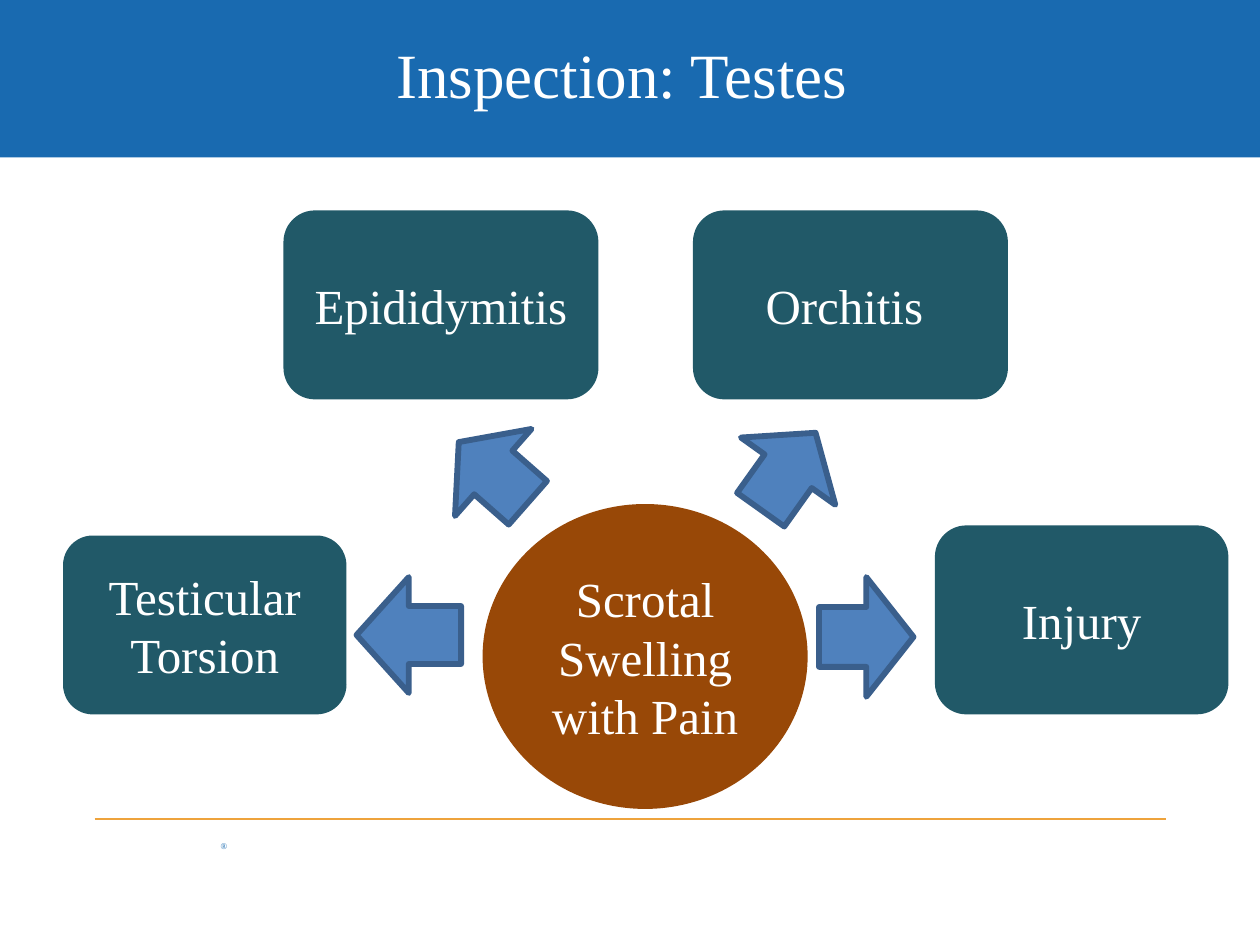
import pptx
import pptx.util
import pptx.dml.color
import pptx.enum.shapes
import pptx.enum.text
import pptx.oxml

Inches = pptx.util.Inches
Pt = pptx.util.Pt
SHAPES = pptx.enum.shapes.MSO_SHAPE
FONT = "Times New Roman"
COLORS = {
    "banner": "196AB0",
    "rule": "EEA33C",
    "center": "984807",
    "cause": "215968",
    "arrow": "4F81BD",
    "arrow_edge": "3A5F8C",
    "text": "FFFFFF",
}

TITLE = "Inspection: Testes "
SYMPTOM = ("Scrotal Swelling with Pain", (3.83, 4, 2.58, 2.42))
CAUSES = [
    ("Testicular Torsion", (0.5, 4.25, 2.25, 1.42)),
    ("Epididymitis", (2.25, 1.67, 2.5, 1.5)),
    ("Orchitis ", (5.5, 1.67, 2.5, 1.5)),
    ("Injury", (7.42, 4.17, 2.33, 1.5)),
]
ARROWS = [
    ((2.83, 4.58, 0.83, 0.92), 0),
    ((3.55, 3.29, 0.73, 0.92), 41.3),
    ((5.88, 3.28, 0.75, 0.92), 125.5),
    ((6.5, 4.58, 0.75, 0.95), 180),
]


def rgb(name):
    return pptx.dml.color.RGBColor.from_string(COLORS[name])


def add_box(slide, kind, box, fill, edge=None):
    shape = slide.shapes.add_shape(kind, *map(Inches, box))
    shape.shadow.inherit = False
    shape.fill.solid()
    shape.fill.fore_color.rgb = rgb(fill)
    if edge:
        shape.line.color.rgb = rgb(edge)
        shape.line.width = Pt(3.35)
    else:
        shape.line.fill.background()
    return shape


def write(shape, text, size, color="text", align=pptx.enum.text.PP_ALIGN.CENTER):
    frame = shape.text_frame
    frame.word_wrap = True
    frame.vertical_anchor = pptx.enum.text.MSO_ANCHOR.MIDDLE
    paragraph = frame.paragraphs[0]
    paragraph.alignment = align
    run = paragraph.add_run()
    run.text = text
    run.font.name = FONT
    run.font.size = Pt(size)
    run.font.color.rgb = rgb(color)


def add_mark(slide):
    mark = slide.shapes.add_textbox(*map(Inches, (1.75, 6.67, 0.25, 0.08)))
    frame = mark.text_frame
    frame.margin_left = frame.margin_right = 0
    frame.margin_top = frame.margin_bottom = 0
    write(mark, "®", 5, "banner", pptx.enum.text.PP_ALIGN.LEFT)
    frame.vertical_anchor = pptx.enum.text.MSO_ANCHOR.TOP


def add_rule(slide):
    rule = slide.shapes.add_connector(
        pptx.enum.shapes.MSO_CONNECTOR.STRAIGHT,
        *map(Inches, (0.75, 6.5, 9.25, 6.5)),
    )
    rule.line.color.rgb = rgb("rule")
    rule.line.width = Pt(0.75)
    properties = rule._element.spPr
    properties.append(properties.makeelement(pptx.oxml.ns.qn("a:effectLst"), {}))


def main():
    presentation = pptx.Presentation()
    presentation.slide_width = Inches(10)
    presentation.slide_height = Inches(7.5)
    slide = presentation.slides.add_slide(presentation.slide_layouts[6])

    add_box(slide, SHAPES.RECTANGLE, (0, 0, 10, 1.25), "banner")
    add_mark(slide)
    add_rule(slide)
    title = slide.shapes.add_textbox(*map(Inches, (0.5, 0.08, 9, 1)))
    write(title, TITLE, 36)

    text, box = SYMPTOM
    write(add_box(slide, SHAPES.OVAL, box, "center"), text, 28)
    for text, box in CAUSES:
        write(add_box(slide, SHAPES.ROUNDED_RECTANGLE, box, "cause"), text, 28)
    for box, angle in ARROWS:
        arrow = add_box(slide, SHAPES.LEFT_ARROW, box, "arrow", "arrow_edge")
        arrow.rotation = angle

    presentation.save("out.pptx")


if __name__ == "__main__":
    main()
